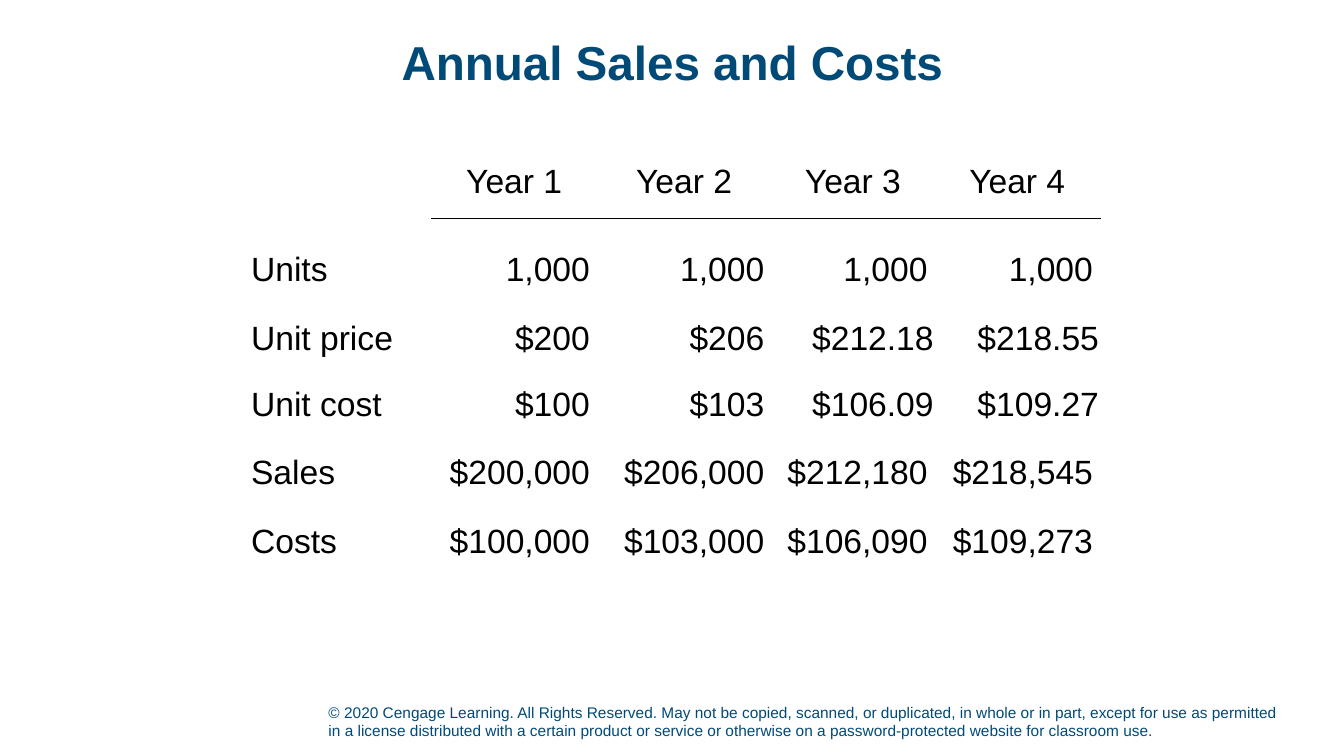
from lxml.etree import SubElement
from pptx import Presentation
from pptx.dml.color import RGBColor
from pptx.enum.text import MSO_ANCHOR as Anchor, PP_ALIGN as Align
from pptx.oxml import parse_xml
from pptx.oxml.ns import nsdecls, qn
from pptx.util import Inches, Pt

NAVY = RGBColor(0x00, 0x4A, 0x78)
BLACK = RGBColor(0x00, 0x00, 0x00)

TITLE = "Annual Sales and Costs"
COPYRIGHT = (
    "© 2020 Cengage Learning. All Rights Reserved. May not be copied, scanned, or duplicated, "
    "in whole or in part, except for use as permitted in a license distributed with a certain "
    "product or service or otherwise on a password-protected website for classroom use."
)
FIGURES = [
    ["", "Year 1", "Year 2", "Year 3", "Year 4"],
    ["Units", "1,000", "1,000", "1,000", "1,000"],
    ["Unit price", "$200", "$206", "$212.18", "$218.55"],
    ["Unit cost", "$100", "$103", "$106.09", "$109.27"],
    ["Sales", "$200,000", "$206,000", "$212,180", "$218,545"],
    ["Costs", "$100,000", "$103,000", "$106,090", "$109,273"],
]
COLUMN_WIDTHS = [1.86, 1.64, 1.73, 1.62, 1.64]
ROW_HEIGHTS = [0.73, 0.69, 0.69, 0.65, 0.68, 0.68]


class SlideBuilder:
    """Adds text and tables in one style to a slide."""

    def __init__(self, page, font="Arial"):
        self.page = page
        self.font = font

    def format_text(self, frame, size, color, align, bold=False):
        para = frame.paragraphs[0]
        para.alignment = align
        for span in para.runs:
            span.font.name = self.font
            span.font.size = Pt(size)
            span.font.bold = bold
            span.font.color.rgb = color
        return para

    def text(self, words, place, size, anchor, align=Align.LEFT, bold=False):
        box = self.page.shapes.add_textbox(*map(Inches, place))
        frame = box.text_frame
        frame.word_wrap = True
        frame.vertical_anchor = anchor
        frame.text = words
        return self.format_text(frame, size, NAVY, align, bold)

    def rule(self, cell, side):
        properties = cell._tc.get_or_add_tcPr()
        line = parse_xml(f'<a:{side} {nsdecls("a")} w="{Pt(1)}"/>')
        fill = SubElement(line, qn("a:solidFill"))
        SubElement(fill, qn("a:srgbClr"), val=str(BLACK))
        properties.insert(0, line)

    def fill_cell(self, cell, words, row, column):
        cell.fill.background()
        tight = "." in words
        cell.margin_left = cell.margin_right = Inches(0.01 if tight else 0.07)
        cell.margin_top = Inches(0.01 if tight else 0)
        cell.margin_bottom = 0
        cell.vertical_anchor = Anchor.BOTTOM if row else Anchor.MIDDLE
        cell.text = words
        align = Align.LEFT if column == 0 else Align.RIGHT if row else Align.CENTER
        self.format_text(cell.text_frame, 24, BLACK, align)
        if column and row < 2:
            self.rule(cell, "lnT" if row else "lnB")

    def table(self, rows, left, top, widths, heights):
        place = map(Inches, (left, top, sum(widths), sum(heights)))
        table = self.page.shapes.add_table(len(rows), len(widths), *place).table
        table.first_row = table.horz_banding = False
        for column, width in zip(table.columns, widths):
            column.width = Inches(width)
        for row, height in zip(table.rows, heights):
            row.height = Inches(height)
        for r, row in enumerate(rows):
            for c, words in enumerate(row):
                self.fill_cell(table.cell(r, c), words, r, c)


def main():
    deck = Presentation()
    deck.slide_width = Inches(13.33)
    deck.slide_height = Inches(7.5)
    builder = SlideBuilder(deck.slides.add_slide(deck.slide_layouts[6]))
    builder.text(COPYRIGHT, (3.16, 6.89, 9.63, 0.5), 11, Anchor.BOTTOM)
    title = builder.text(TITLE, (0.92, 0.15, 11.5, 1), 34, Anchor.MIDDLE, Align.CENTER, True)
    title.line_spacing = 0.9
    builder.table(FIGURES, 2.42, 1.44, COLUMN_WIDTHS, ROW_HEIGHTS)
    deck.save("out.pptx")


if __name__ == "__main__":
    main()
